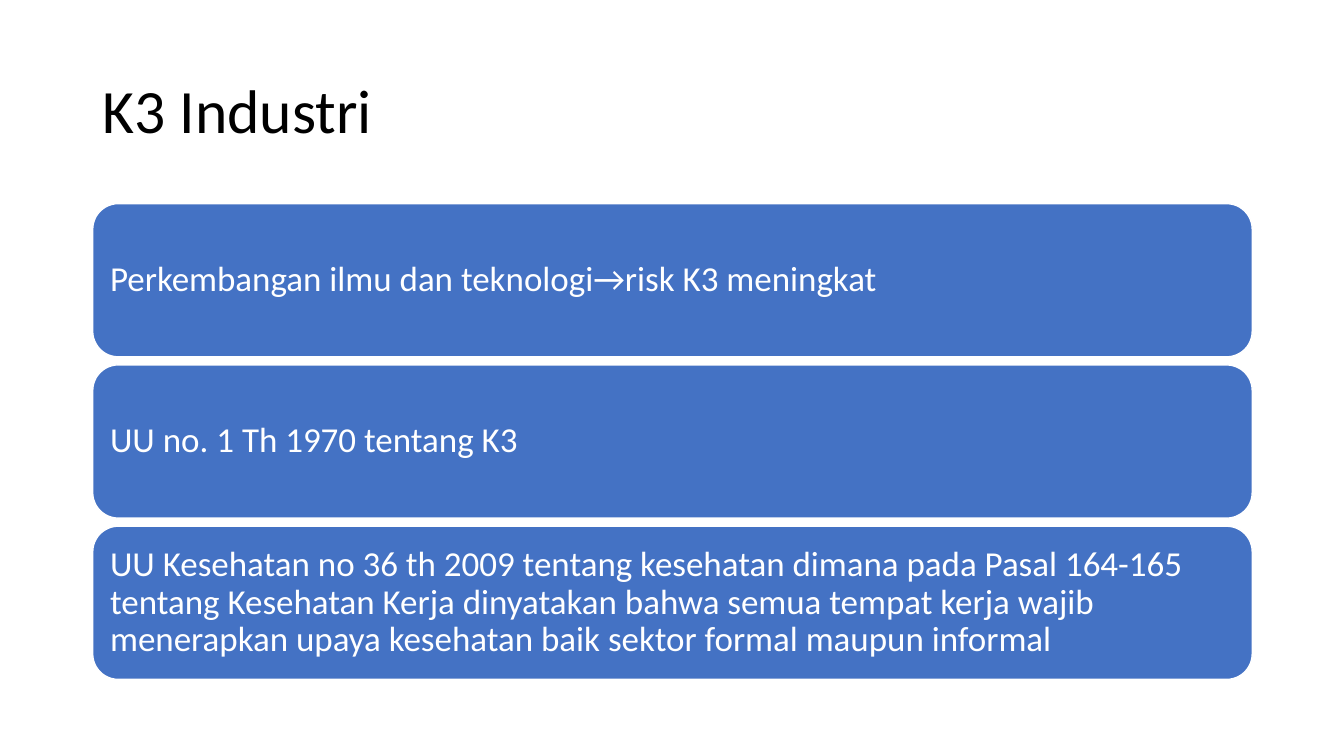
from pptx import Presentation
from pptx.dml.color import RGBColor
from pptx.enum.shapes import MSO_SHAPE
from pptx.enum.text import MSO_ANCHOR, PP_ALIGN
from pptx.util import Inches, Pt

ROUND = MSO_SHAPE.ROUNDED_RECTANGLE
MIDDLE = MSO_ANCHOR.MIDDLE
LEFT = PP_ALIGN.LEFT

BLACK = RGBColor(0x00, 0x00, 0x00)
WHITE = RGBColor(0xFF, 0xFF, 0xFF)
BLUE = RGBColor(0x44, 0x72, 0xC4)
FONT = "Calibri"

# Grid: one column, with the bars in equal rows
WIDTH, HEIGHT = Inches(13.33), Inches(7.5)
COL_X, COL_W = Inches(0.92), Inches(11.5)
TITLE_Y, TITLE_H = Inches(0.4), Inches(1.45)
BAR_Y, BAR_H = Inches(2.02), Inches(1.52)
ROW_H = Inches(1.6)

TITLE = "K3 Industri"
POINTS = [
    "Perkembangan ilmu dan teknologi→risk K3 meningkat",
    "UU no. 1 Th 1970 tentang K3",
    "UU Kesehatan no 36 th 2009 tentang kesehatan dimana pada Pasal 164-165 "
    "tentang Kesehatan Kerja dinyatakan bahwa semua tempat kerja wajib "
    "menerapkan upaya kesehatan baik sektor formal maupun informal",
]


def write(shape, text, size, color):
    frame = shape.text_frame
    frame.word_wrap = True
    frame.vertical_anchor = MIDDLE
    frame.margin_left = frame.margin_right = Inches(0.1)
    para = frame.paragraphs[0]
    para.text = text
    para.alignment = LEFT
    para.line_spacing = 0.9
    para.font.name = FONT
    para.font.size = Pt(size)
    para.font.color.rgb = color


def add_title(slide, text):
    box = slide.shapes.add_textbox(COL_X, TITLE_Y, COL_W, TITLE_H)
    write(box, text, 44, BLACK)


def add_bar(slide, row, text):
    bar = slide.shapes.add_shape(
        ROUND, COL_X, BAR_Y + row * ROW_H, COL_W, BAR_H)
    bar.shadow.inherit = False
    bar.fill.solid()
    bar.fill.fore_color.rgb = BLUE
    bar.line.color.rgb = WHITE
    bar.line.width = Pt(1)
    write(bar, text, 25, WHITE)


def main():
    deck = Presentation()
    deck.slide_width, deck.slide_height = WIDTH, HEIGHT
    slide = deck.slides.add_slide(deck.slide_layouts[6])

    # Heading
    add_title(slide, TITLE)

    # Stacked bars
    for row, text in enumerate(POINTS):
        add_bar(slide, row, text)

    deck.save("out.pptx")


if __name__ == "__main__":
    main()
